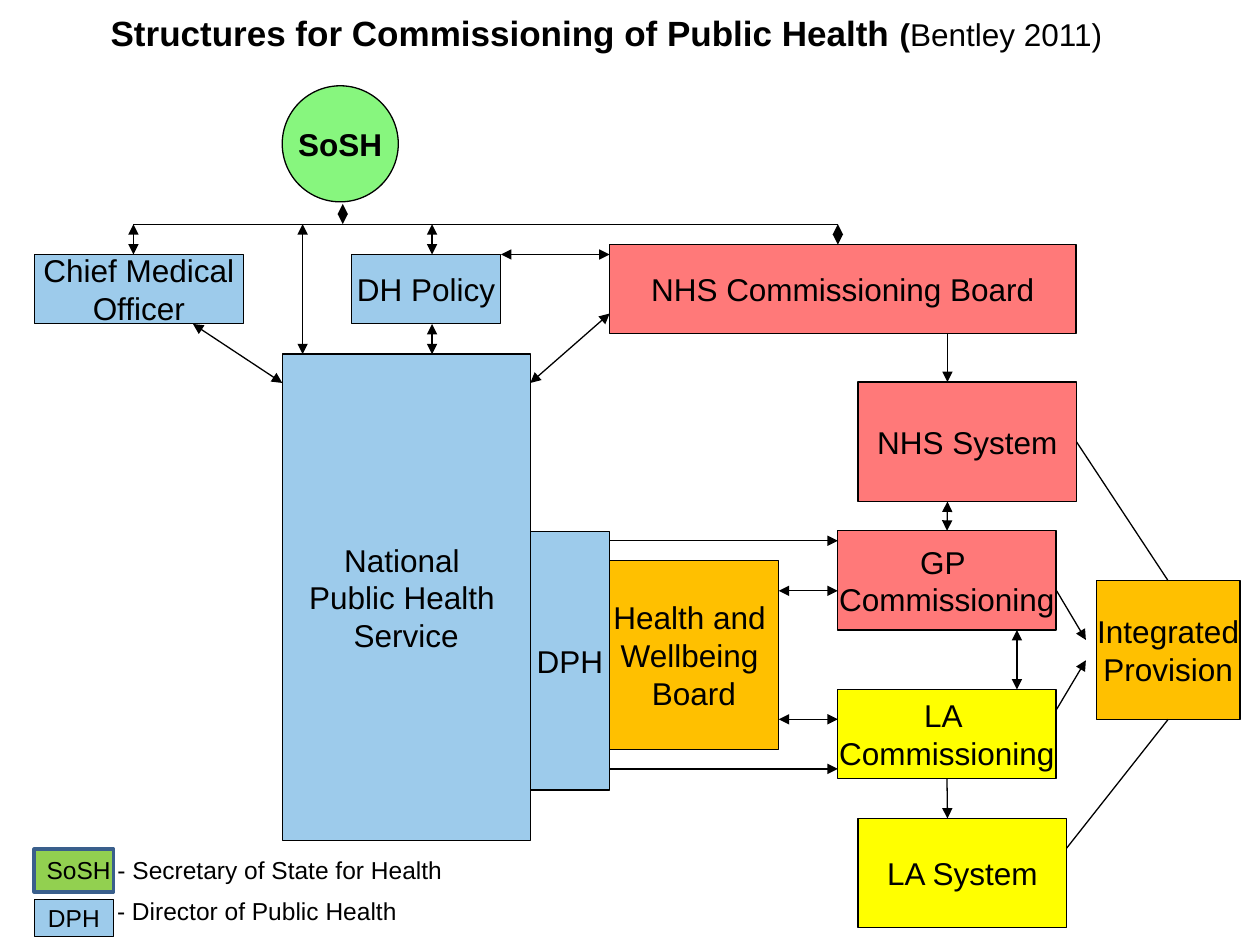
from lxml.etree import SubElement
from pptx import Presentation
from pptx.dml.color import RGBColor
from pptx.enum.shapes import MSO_CONNECTOR as Connector, MSO_SHAPE as Shape
from pptx.enum.text import MSO_ANCHOR as Anchor, MSO_AUTO_SIZE as AutoSize, PP_ALIGN as Align
from pptx.oxml.ns import qn
from pptx.util import Cm, Pt

BLACK = RGBColor(0x00, 0x00, 0x00)
BLUE = RGBColor(0x9D, 0xCB, 0xEB)
RED = RGBColor(0xFF, 0x79, 0x79)
ORANGE = RGBColor(0xFF, 0xC0, 0x00)
YELLOW = RGBColor(0xFF, 0xFF, 0x00)
LIGHT_GREEN = RGBColor(0x87, 0xF6, 0x7E)
GREEN = RGBColor(0x92, 0xD0, 0x50)
NAVY = RGBColor(0x3A, 0x5F, 0x8C)

TOP, LEFT, BOTTOM, RIGHT = range(4)


class Diagram:
    font = "Arial"
    line_width = 0.75

    def __init__(self, slide):
        self.s = slide

    def style(self, r, size, bold=False):
        r.font.name = self.font
        r.font.size = Pt(size)
        r.font.bold = bold
        r.font.color.rgb = BLACK

    def box(self, text, x, y, w, h, fill, kind=Shape.RECTANGLE, size=18, bold=False,
            line=BLACK, line_width=line_width):
        sp = self.s.shapes.add_shape(kind, Cm(x), Cm(y), Cm(w), Cm(h))
        sp.shadow.inherit = False
        sp.fill.solid()
        sp.fill.fore_color.rgb = fill
        sp.line.color.rgb = line
        sp.line.width = Pt(line_width)
        tf = sp.text_frame
        tf.word_wrap = False
        tf.vertical_anchor = Anchor.MIDDLE
        tf.text = text
        for p in tf.paragraphs:
            p.alignment = Align.CENTER
            for r in p.runs:
                self.style(r, size, bold)
        return sp

    def label(self, x, y, w, h, *runs):
        """Add one line of text; each run is (text, size, bold)."""
        tf = self.s.shapes.add_textbox(Cm(x), Cm(y), Cm(w), Cm(h)).text_frame
        tf.word_wrap = False
        tf.auto_size = AutoSize.SHAPE_TO_FIT_TEXT
        for text, size, bold in runs:
            r = tf.paragraphs[0].add_run()
            r.text = text
            self.style(r, size, bold)

    def line(self, x1, y1, x2, y2, ends="", begin=None, end=None):
        """Draw a line; ends holds '<' and/or '>', begin and end are (shape, side)."""
        c = self.s.shapes.add_connector(Connector.STRAIGHT, Cm(x1), Cm(y1), Cm(x2), Cm(y2))
        if begin:
            c.begin_connect(*begin)
        if end:
            c.end_connect(*end)
        c.line.color.rgb = BLACK
        c.line.width = Pt(self.line_width)
        ln = c.line._get_or_add_ln()
        for mark, tag in (("<", "a:headEnd"), (">", "a:tailEnd")):
            if mark in ends:
                SubElement(ln, qn(tag), type="triangle")
        SubElement(c._element.spPr, qn("a:effectLst"))


def main():
    prs = Presentation()
    prs.slide_width, prs.slide_height = Cm(25.4), Cm(19.05)
    d = Diagram(prs.slides.add_slide(prs.slide_layouts[6]))

    d.label(1.98, 0.1, 21.11, 1.96,
            ("Structures for Commissioning of Public Health ", 20, True),
            ("(", 18, True), ("Bentley 2011)", 18, False))

    # National bodies
    d.box("SoSH", 5.69, 1.73, 2.34, 2.34, LIGHT_GREEN, Shape.OVAL, bold=True)
    d.box("Chief Medical\nOfficer", 0.69, 5.13, 4.22, 1.4, BLUE)
    d.box("DH Policy", 7.09, 5.13, 3, 1.4, BLUE)
    d.box("NHS Commissioning Board", 12.29, 4.93, 9.4, 1.8, RED)

    # Public health service
    d.box("DPH", 10.69, 10.72, 1.6, 5.21, BLUE)
    d.box("National \nPublic Health \nService", 5.69, 7.14, 5, 9.8, BLUE)
    d.box("Health and \nWellbeing \nBoard", 12.29, 11.3, 3.4, 3.81, ORANGE)

    # Commissioning and provision
    nhs_system = d.box("NHS System", 17.3, 7.7, 4.4, 2.41, RED)
    gp = d.box("GP \nCommissioning", 16.89, 10.7, 4.4, 2, RED)
    la = d.box("LA \nCommissioning", 16.89, 13.9, 4.4, 1.8, YELLOW)
    d.box("LA System", 17.3, 16.5, 4.2, 2.2, YELLOW)
    provision = d.box("Integrated\nProvision", 22.1, 11.71, 2.9, 2.79, ORANGE)

    # Bar below SoSH and its branches
    bar = 4.52
    d.line(2.69, bar, 16.89, bar)
    d.line(6.91, 4.11, 6.91, bar, "<>")
    for x, bottom in ((2.69, 5.13), (6.1, 7.14), (8.71, 5.13), (16.89, 4.93)):
        d.line(x, bar, x, bottom, "<>")

    # Links among the national bodies
    d.line(10.1, 5.13, 12.29, 5.13, "<>")
    d.line(8.71, 6.53, 8.71, 7.14, "<>")
    d.line(3.89, 6.53, 5.69, 7.72, "<>")
    d.line(10.69, 7.72, 12.29, 6.32, "<>")

    # Links into local commissioning
    for y in (10.9, 15.5):
        d.line(12.29, y, 16.89, y, ">")
    for y in (11.91, 14.5):
        d.line(15.7, y, 16.89, y, "<>")
    d.line(19.1, 6.72, 19.1, 7.7, ">")
    d.line(19.1, 10.7, 19.1, 10.11, "<>", begin=(gp, TOP))
    d.line(20.5, 12.7, 20.5, 13.9, "<>")
    d.line(19.1, 15.7, 19.1, 16.5, ">", begin=(la, BOTTOM))

    # Links into integrated provision
    d.line(21.3, 11.91, 21.89, 12.9, ">")
    d.line(21.3, 14.3, 21.89, 13.31, ">")
    d.line(21.69, 8.91, 23.5, 11.71, begin=(nhs_system, RIGHT), end=(provision, TOP))
    d.line(21.5, 17.1, 23.5, 14.5, end=(provision, BOTTOM))

    # Legend
    d.box("", 0.69, 17.12, 1.6, 0.86, GREEN, line=NAVY, line_width=2)
    d.label(0.69, 17.12, 8.53, 0.86, ("SoSH - Secretary of State for Health", 14, False))
    d.box("DPH", 0.69, 18.14, 1.6, 0.74, BLUE, size=14)
    d.label(2.11, 17.93, 6.17, 0.86, ("- Director of Public Health", 14, False))

    prs.save("out.pptx")


if __name__ == "__main__":
    main()
